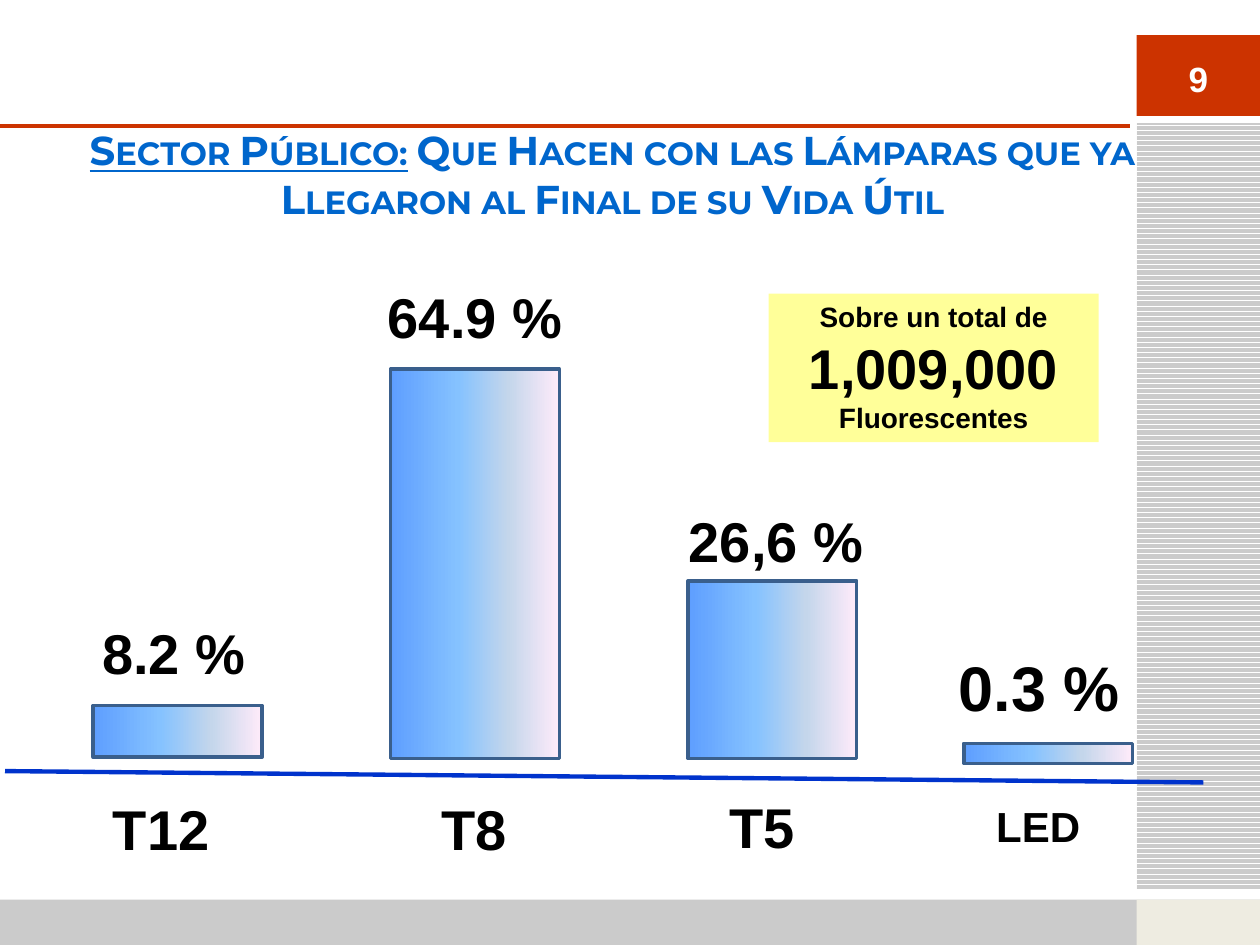
from dataclasses import dataclass

from lxml import etree
from pptx import Presentation
from pptx.dml.color import RGBColor
from pptx.enum.dml import MSO_PATTERN
from pptx.enum.shapes import MSO_CONNECTOR, MSO_SHAPE
from pptx.enum.text import MSO_ANCHOR, PP_ALIGN
from pptx.oxml.ns import qn
from pptx.util import Inches, Pt


@dataclass(frozen=True)
class Theme:
    font: str = "Arial"
    title_font: str = "Montserrat"
    accent: str = "CC3300"
    title: str = "0066CC"
    text: str = "000000"
    white: str = "FFFFFF"
    gray: str = "CBCBCB"
    corner: str = "EEECE1"
    note: str = "FFFF99"
    axis: str = "0033CC"
    bar_line: str = "3A5F8C"
    bar_stops: tuple = ((0, "5E9EFF"), (40, "85C2FF"), (70, "C4D6EB"), (100, "FFEBFA"))
    title_size: float = 23
    number_size: float = 20
    note_size: float = 16
    led_size: float = 24
    label_size: float = 32
    big_size: float = 36


THEME = Theme()


def rgb(code):
    return RGBColor.from_string(code)


def add_run(paragraph, text, size, color=THEME.text, font=THEME.font, **extra):
    run = paragraph.add_run()
    run.text = text
    formats = {"name": font, "size": Pt(size), "bold": True, **extra}
    for name, value in formats.items():
        setattr(run.font, name, value)
    run.font.color.rgb = rgb(color)
    return run


def add_label(slide, box, text, size, color=THEME.text):
    frame = slide.shapes.add_textbox(*map(Inches, box)).text_frame
    frame.word_wrap = True
    frame.paragraphs[0].alignment = PP_ALIGN.CENTER
    add_run(frame.paragraphs[0], text, size, color)


def add_block(slide, box, color=None):
    block = slide.shapes.add_shape(MSO_SHAPE.RECTANGLE, *map(Inches, box))
    block.shadow.inherit = False
    block.line.fill.background()
    if color:
        block.fill.solid()
        block.fill.fore_color.rgb = rgb(color)
    return block


def add_rule(slide, start, end, color, width):
    rule = slide.shapes.add_connector(
        MSO_CONNECTOR.STRAIGHT, *map(Inches, (*start, *end)))
    rule.line.color.rgb = rgb(color)
    rule.line.width = Pt(width)
    etree.SubElement(rule.element.spPr, qn("a:effectLst"))


def add_frame(slide, left, width):
    """Striped side band, footer, page number and header rule."""
    stripes = add_block(slide, (left, 0.97, width, 6.09))
    stripes.fill.patterned()
    stripes.fill.pattern = MSO_PATTERN.DARK_HORIZONTAL
    stripes.fill.fore_color.rgb = rgb(THEME.gray)
    stripes.fill.back_color.rgb = rgb(THEME.white)
    add_block(slide, (0, 7.14, left + width, 0.39), THEME.gray)
    add_block(slide, (left, 0.28, width, 0.64), THEME.accent)
    add_label(slide, (left, 0.41, width, 0.43), "9", THEME.number_size, THEME.white)
    add_block(slide, (left, 7.14, width, 0.38), THEME.corner)
    add_rule(slide, (-0.04, 1), (left - 0.05, 1), THEME.accent, 2.25)


def add_title(slide, box):
    title = slide.shapes.title
    title.left, title.top, title.width, title.height = map(Inches, box)
    frame = title.text_frame
    frame.word_wrap = True
    frame.vertical_anchor = MSO_ANCHOR.MIDDLE
    heading = frame.paragraphs[0]
    heading.alignment = PP_ALIGN.CENTER
    parts = (
        ("Sector Público:", True),
        (" Que Hacen con las Lámparas que ya Llegaron al Final de su Vida Útil", False),
    )
    for text, underline in parts:
        run = add_run(heading, text, THEME.title_size, THEME.title,
                      THEME.title_font, underline=underline)
        run.font._element.set("cap", "small")


def add_bar(slide, box):
    bar = add_block(slide, box)
    bar.fill.gradient()
    bar.fill.gradient_angle = 0
    stops = bar.element.spPr.find(qn("a:gradFill")).find(qn("a:gsLst"))
    for stop in list(stops):
        stops.remove(stop)
    for percent, color in THEME.bar_stops:
        stop = etree.SubElement(stops, qn("a:gs"), pos=str(percent * 1000))
        etree.SubElement(stop, qn("a:srgbClr"), val=color)
    bar.line.color.rgb = rgb(THEME.bar_line)
    bar.line.width = Pt(2)


def add_lamp_bars(slide, bar_width, label_width):
    """Bars with a share above and a lamp type below."""
    normal, big, led = THEME.label_size, THEME.big_size, THEME.led_size
    # bar left, top, height; share, left, top, size; lamp, left, top, size
    lamps = (
        ((0.74, 5.6, 0.41), ("8.2 %", 0.28, 4.86, normal), ("T12", 0.18, 6.26, normal)),
        ((3.1, 2.93, 3.09), ("64.9 %", 2.67, 2.19, normal), ("T8", 2.66, 6.26, normal)),
        ((5.46, 4.61, 1.41), ("26,6 %", 5.06, 3.97, normal), ("T5", 4.95, 6.24, normal)),
        ((7.65, 5.9, 0.16), ("0.3 %", 7.15, 5.1, big), ("LED", 7.14, 6.3, led)),
    )
    for (left, top, height), *labels in lamps:
        add_bar(slide, (left, top, bar_width, height))
        for text, label_left, label_top, size in labels:
            add_label(slide, (label_left, label_top, label_width, size / 50), text, size)
    add_rule(slide, (0.04, 6.12), (9.55, 6.21), THEME.axis, 2.5)


def add_total_note(slide, box):
    frame = add_block(slide, box, THEME.note).text_frame
    frame.word_wrap = True
    frame.vertical_anchor = MSO_ANCHOR.TOP
    total, unit = frame.paragraphs[0], frame.add_paragraph()
    for paragraph in (total, unit):
        paragraph.alignment = PP_ALIGN.CENTER
    add_run(total, "Sobre un total de ", THEME.note_size)
    add_run(total, "1,009,000", THEME.label_size)
    add_run(unit, "Fluorescentes", THEME.note_size)


def main():
    deck = Presentation()
    deck.slide_width, deck.slide_height = Inches(10), Inches(7.5)
    slide = deck.slides.add_slide(deck.slide_layouts[5])
    add_frame(slide, 9.02, 0.98)
    add_title(slide, (0.12, 0.99, 9.48, 0.78))
    add_lamp_bars(slide, 1.34, 2.2)
    add_total_note(slide, (6.1, 2.33, 2.62, 1.18))
    deck.save("out.pptx")


if __name__ == "__main__":
    main()
